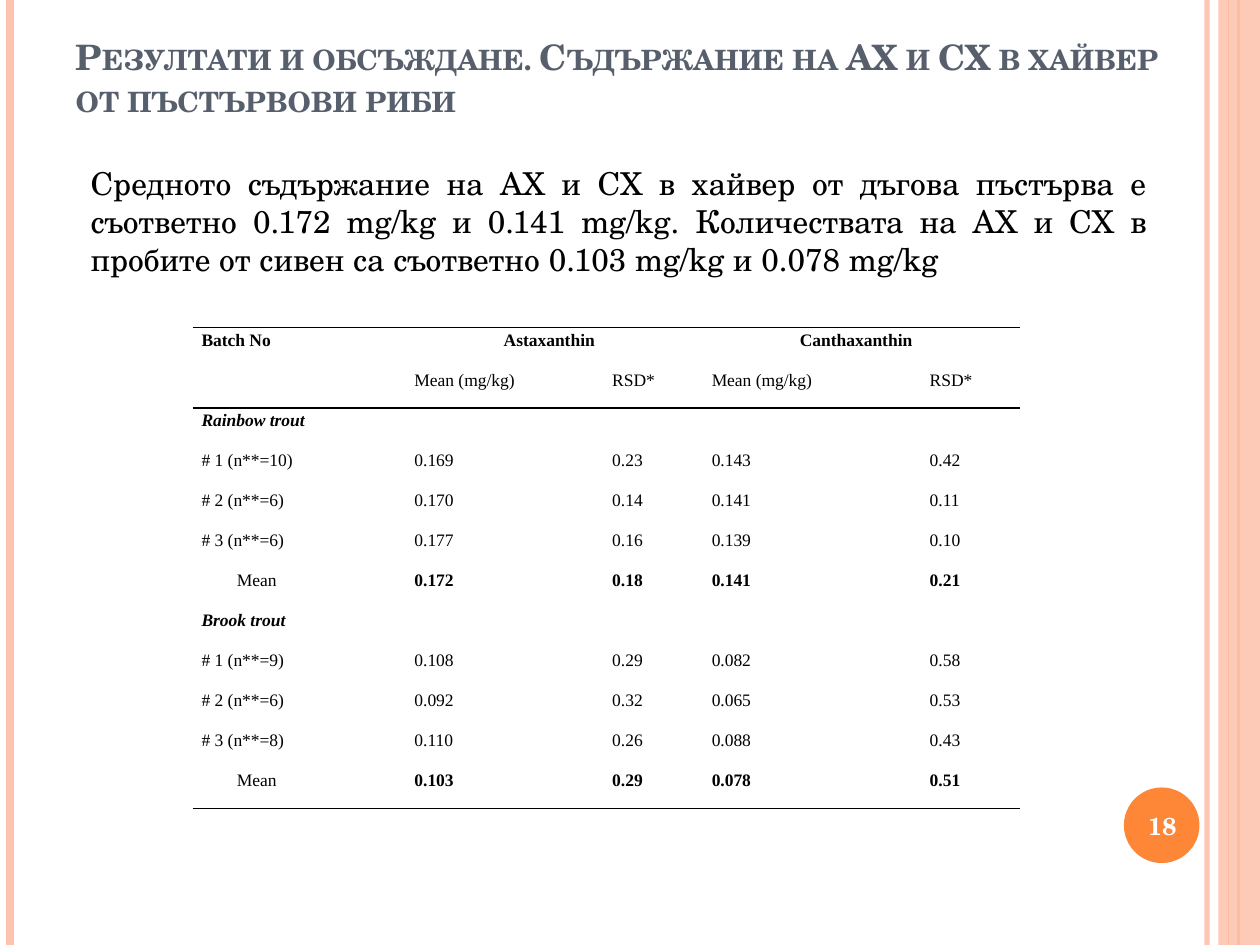
from lxml.etree import SubElement
from pptx import Presentation
from pptx.dml.color import RGBColor
from pptx.enum.shapes import MSO_CONNECTOR, MSO_SHAPE
from pptx.enum.text import MSO_ANCHOR, MSO_AUTO_SIZE, PP_ALIGN
from pptx.oxml.ns import qn
from pptx.util import Inches, Pt

PEACH = RGBColor(0xFE, 0xC3, 0xAE)
ORANGE = RGBColor(0xFE, 0x86, 0x37)
SLATE = RGBColor(0x57, 0x5F, 0x6D)
BLACK = RGBColor(0, 0, 0)
WHITE = RGBColor(255, 255, 255)
SERIF = "TeX Gyre Schola"
TABLE_FONT = "Times New Roman"
W, H = 10, 7.5

TITLE = "Резултати и обсъждане. Съдържание на AX и CX в хайвер от пъстървови риби"
BODY = ("Средното съдържание на AX и CX в хайвер от дъгова пъстърва е съответно "
        "0.172 mg/kg и 0.141 mg/kg. Количествата на AX и CX в пробите от сивен са "
        "съответно 0.103 mg/kg и 0.078 mg/kg ")
NUMBER = "18"
STRIPES = [(9.58, PEACH, 3, 93), (0.08, PEACH, 4.5, 100),
           (9.83, ORANGE, 1.5, 100), (9.75, ORANGE, 0.75, 100)]
COLS = [1.69, 1.57, 0.79, 1.73, 0.79]
ROW_H = 3.82 / 12
ROWS = [
    ("head", ["Batch No", "Astaxanthin", "", "Canthaxanthin", ""]),
    ("data", ["", "Mean (mg/kg)", "RSD*", "Mean (mg/kg)", "RSD*"]),
    ("fish", ["Rainbow trout", "", "", "", ""]),
    ("data", ["# 1 (n**=10)", "0.169", "0.23", "0.143", "0.42"]),
    ("data", ["# 2 (n**=6)", "0.170", "0.14", "0.141", "0.11"]),
    ("data", ["# 3 (n**=6)", "0.177", "0.16", "0.139", "0.10"]),
    ("mean", ["Mean", "0.172", "0.18", "0.141", "0.21"]),
    ("fish", ["Brook trout", "", "", "", ""]),
    ("data", ["# 1 (n**=9)", "0.108", "0.29", "0.082", "0.58"]),
    ("data", ["# 2 (n**=6)", "0.092", "0.32", "0.065", "0.53"]),
    ("data", ["# 3 (n**=8)", "0.110", "0.26", "0.088", "0.43"]),
    ("mean", ["Mean", "0.103", "0.29", "0.078", "0.51"]),
]
RULES = {(0, "T"), (1, "B"), (2, "T"), (len(ROWS) - 1, "B")}


def set_alpha(shape, percent):
    color = next(shape._element.spPr.iter(qn("a:srgbClr")))
    SubElement(color, qn("a:alpha"), val=str(percent * 1000))


def add_stripe(s, x, color, width, alpha):
    line = s.shapes.add_connector(MSO_CONNECTOR.STRAIGHT, Inches(x), 0, Inches(x), Inches(H))
    line.line.color.rgb = color
    line.line.width = Pt(width)
    SubElement(line._element.spPr, qn("a:effectLst"))
    if alpha < 100:
        set_alpha(line, alpha)


def add_block(s, kind, box, color):
    sp = s.shapes.add_shape(kind, *map(Inches, box))
    sp.shadow.inherit = False
    sp.fill.solid()
    sp.fill.fore_color.rgb = color
    sp.line.fill.background()
    return sp


def write(sp, box, text, size, color, align, anchor, bold=False):
    sp.left, sp.top, sp.width, sp.height = map(Inches, box)
    tf = sp.text_frame
    tf.word_wrap = True
    tf.auto_size = MSO_AUTO_SIZE.NONE
    tf.vertical_anchor = anchor
    tf.text = text
    p = tf.paragraphs[0]
    p.alignment = align
    style(p.runs[0], SERIF, size, color, bold)
    return p.runs[0]


def style(r, font, size, color, bold, italic=False):
    r.font.name, r.font.size = font, Pt(size)
    r.font.bold, r.font.italic = bold, italic
    r.font.color.rgb = color


def set_borders(cell, row):
    tcPr = cell._tc.get_or_add_tcPr()
    for side in "LRTB":
        ln = SubElement(tcPr, qn("a:ln" + side), w=str(Pt(1)))
        if (row, side) in RULES:
            fill = SubElement(ln, qn("a:solidFill"))
            SubElement(fill, qn("a:srgbClr"), val=str(BLACK))
        else:
            SubElement(ln, qn("a:noFill"))


def fill_cell(cell, kind, row, col, text):
    cell.margin_left = cell.margin_right = Inches(0.07)
    cell.margin_top = cell.margin_bottom = 0
    set_borders(cell, row)
    cell.fill.background()
    if not text:
        return
    cell.text = text
    p = cell.text_frame.paragraphs[0]
    p.line_spacing = 1.15
    p.alignment = PP_ALIGN.RIGHT if kind == "head" and col else PP_ALIGN.JUSTIFY
    if kind == "mean" and col == 0:
        p._p.get_or_add_pPr().set("marL", str(Inches(0.28)))
    bold = kind in ("head", "fish") or (kind == "mean" and col > 0)
    style(p.runs[0], TABLE_FONT, 10, BLACK, bold, kind == "fish")


def add_results(s):
    box = (1.53, 2.6, sum(COLS), ROW_H * len(ROWS))
    table = s.shapes.add_table(len(ROWS), len(COLS), *map(Inches, box)).table
    table.first_row = table.horz_banding = False
    for column, width in zip(table.columns, COLS):
        column.width = Inches(width)
    for i, (kind, texts) in enumerate(ROWS):
        table.rows[i].height = Inches(ROW_H)
        for j, text in enumerate(texts):
            fill_cell(table.cell(i, j), kind, i, j, text)


def main():
    prs = Presentation()
    prs.slide_width, prs.slide_height = Inches(W), Inches(H)
    s = prs.slides.add_slide(prs.slide_layouts[5])
    for stripe in STRIPES:
        add_stripe(s, *stripe)
    band = add_block(s, MSO_SHAPE.RECTANGLE, (9.67, 0, W - 9.67, H), PEACH)
    set_alpha(band, 87)
    add_block(s, MSO_SHAPE.OVAL, (8.92, 6.25, 0.6, 0.6), ORANGE)

    r = write(s.shapes.title, (0.5, 0.08, 9.08, 0.92), TITLE, 20, SLATE,
              PP_ALIGN.LEFT, MSO_ANCHOR.BOTTOM, True)
    r.font._element.set("cap", "small")
    write(s.shapes.add_textbox(0, 0, 0, 0), (0.62, 1.25, 8.58, 1.01), BODY, 18, BLACK,
          PP_ALIGN.JUSTIFY, MSO_ANCHOR.MIDDLE)
    write(s.shapes.add_textbox(0, 0, 0, 0), (8.89, 6.27, 0.67, 0.57), NUMBER, 14, WHITE,
          PP_ALIGN.CENTER, MSO_ANCHOR.MIDDLE, True)
    add_results(s)
    prs.save("out.pptx")


if __name__ == "__main__":
    main()
